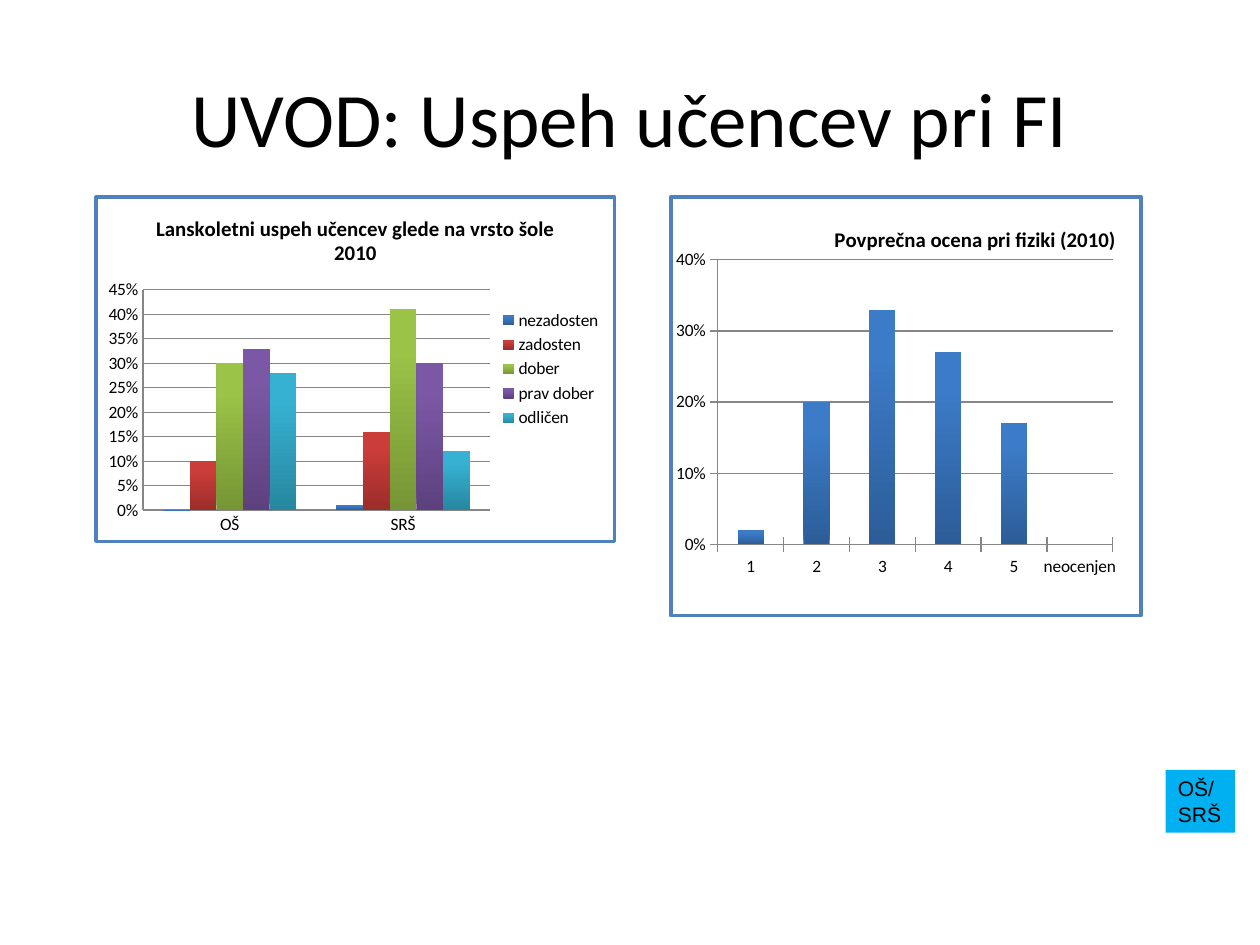
from dataclasses import dataclass
from typing import Optional

from lxml.etree import SubElement
from pptx import Presentation
from pptx.chart.data import CategoryChartData
from pptx.dml.color import RGBColor
from pptx.enum.chart import XL_CHART_TYPE as ChartType
from pptx.enum.chart import XL_LEGEND_POSITION as LegendPosition
from pptx.enum.chart import XL_TICK_MARK as TickMark
from pptx.enum.shapes import MSO_SHAPE as Shape
from pptx.enum.text import MSO_ANCHOR as Anchor
from pptx.enum.text import PP_ALIGN as Align
from pptx.oxml import parse_xml
from pptx.oxml.ns import nsdecls, qn
from pptx.util import Inches, Pt

BLACK, GRID = "000000", "868686"
GRADIENTS = [
    ("2C5D98", "3C7BC7"),
    ("9B2D2A", "CB3D3A"),
    ("769535", "9BC348"),
    ("5D417E", "7B58A6"),
    ("2787A0", "36B1D2"),
]


@dataclass
class Box:
    left: float
    top: float
    width: float
    height: float

    def lengths(self) -> list:
        return [Inches(v) for v in (self.left, self.top, self.width, self.height)]


@dataclass
class GradeChart:
    box: Box
    title: str
    categories: list[str]
    series: dict[str, list[float]]
    number_format: str
    axis_max: float
    axis_step: float
    tick: TickMark
    plot: Box
    legend: bool = False
    title_at: Optional[tuple[float, float]] = None


def color(value: str) -> RGBColor:
    return RGBColor.from_string(value)


def add_run(paragraph, text: str, size: float, face: str, bold: bool = False) -> None:
    run = paragraph.add_run()
    run.text = text
    run.font.size = Pt(size)
    run.font.name = face
    run.font.bold = bold
    run.font.color.rgb = color(BLACK)


def place(parent, index: int, settings: dict) -> None:
    for old in parent.findall(qn("c:layout")):
        parent.remove(old)
    layout = parse_xml(f"<c:layout {nsdecls('c')}/>")
    manual = SubElement(layout, qn("c:manualLayout"))
    for key, value in settings.items():
        SubElement(manual, qn(f"c:{key}")).set("val", str(value))
    parent.insert(index, layout)


def frame_chart(chart_space) -> None:
    frame = parse_xml(
        f'<c:spPr {nsdecls("c", "a")}>'
        '<a:solidFill><a:srgbClr val="FFFFFF"/></a:solidFill>'
        '<a:ln w="25400"><a:solidFill><a:srgbClr val="4F81BD"/></a:solidFill></a:ln>'
        "</c:spPr>"
    )
    chart_space.find(qn("c:chart")).addnext(frame)


def draw_chart(slide, spec: GradeChart) -> None:
    data = CategoryChartData(number_format=spec.number_format)
    data.categories = spec.categories
    for name, values in spec.series.items():
        data.add_series(name, values)
    chart = slide.shapes.add_chart(
        ChartType.COLUMN_CLUSTERED, *spec.box.lengths(), data
    ).chart
    chart.font.size = Pt(10)
    chart.font.name = "Calibri"
    chart.font.color.rgb = color(BLACK)
    frame_chart(chart.element)

    chart.has_title = True
    heading = chart.chart_title
    add_run(heading.text_frame.paragraphs[0], spec.title, 12, "Calibri", True)
    if spec.title_at:
        x, y = spec.title_at
        place(heading._element, 1, {"xMode": "edge", "yMode": "edge", "x": x, "y": y})
    plot = spec.plot
    place(
        chart.element.find(f".//{qn('c:plotArea')}"),
        0,
        {
            "layoutTarget": "inner", "xMode": "edge", "yMode": "edge",
            "x": plot.left, "y": plot.top, "w": plot.width, "h": plot.height,
        },
    )

    chart.has_legend = spec.legend
    if spec.legend:
        chart.legend.position = LegendPosition.RIGHT
        chart.legend.include_in_layout = False

    grades, shares = chart.category_axis, chart.value_axis
    for axis in (grades, shares):
        axis.major_tick_mark = spec.tick
        axis.minor_tick_mark = TickMark.NONE
        axis.format.line.color.rgb = color(GRID)
    shares.minimum_scale = 0
    shares.maximum_scale = spec.axis_max
    shares.major_unit = spec.axis_step
    shares.major_gridlines.format.line.color.rgb = color(GRID)
    shares.tick_labels.number_format = spec.number_format
    shares.tick_labels.number_format_is_linked = False

    bars = chart.plots[0]
    bars.vary_by_categories = False
    bars.gap_width = 150
    bars.overlap = 0
    for series, (dark, light) in zip(bars.series, GRADIENTS):
        fill = series.format.fill
        fill.gradient()
        fill.gradient_angle = 90
        for stop, shade, position in zip(fill.gradient_stops, (dark, light), (0, 0.8)):
            stop.color.rgb = color(shade)
            stop.position = position


def draw_title(slide, text: str, box: Box) -> None:
    frame = slide.shapes.add_textbox(*box.lengths()).text_frame
    frame.word_wrap = True
    frame.vertical_anchor = Anchor.MIDDLE
    frame.paragraphs[0].alignment = Align.CENTER
    add_run(frame.paragraphs[0], text, 44, "Calibri")


def draw_school_tag(slide, text: str, box: Box) -> None:
    tag = slide.shapes.add_shape(Shape.RECTANGLE, *box.lengths())
    tag.shadow.inherit = False
    tag.fill.solid()
    tag.fill.fore_color.rgb = color("00B0F0")
    tag.line.fill.background()
    tag.text_frame.word_wrap = True
    tag.text_frame.vertical_anchor = Anchor.TOP
    tag.text_frame.paragraphs[0].alignment = Align.LEFT
    add_run(tag.text_frame.paragraphs[0], text, 12, "Arial")


def main() -> None:
    deck = Presentation()
    deck.slide_width, deck.slide_height = Inches(10), Inches(7.5)
    slide = deck.slides.add_slide(deck.slide_layouts[6])

    by_school = GradeChart(
        box=Box(0.75, 1.55, 4.14, 2.76),
        title="Lanskoletni uspeh učencev glede na vrsto šole 2010",
        categories=["OŠ", "SRŠ"],
        series={
            "nezadosten": [0, 0.01],
            "zadosten": [0.1, 0.16],
            "dober": [0.3, 0.41],
            "prav dober": [0.33, 0.3],
            "odličen": [0.28, 0.12],
        },
        number_format="0%", axis_max=0.45, axis_step=0.05, tick=TickMark.NONE,
        plot=Box(0.09, 0.27, 0.67, 0.64), legend=True,
    )
    average_grade = GradeChart(
        box=Box(5.31, 1.55, 3.76, 3.35),
        title="Povprečna ocena pri fiziki (2010)",
        categories=["1", "2", "3", "4", "5", "neocenjen"],
        series={"Series 1": [2, 20, 33, 27, 17, 0]},
        number_format="General\\%", axis_max=40, axis_step=10, tick=TickMark.CROSS,
        plot=Box(0.1, 0.15, 0.84, 0.68), title_at=(0.34, 0.06),
    )

    draw_title(slide, "UVOD: Uspeh učencev pri FI", Box(0.5, 0.3, 9, 1.25))
    for chart in (by_school, average_grade):
        draw_chart(slide, chart)
    draw_school_tag(slide, "OŠ/SRŠ", Box(9.25, 6.11, 0.55, 0.5))
    deck.save("out.pptx")


if __name__ == "__main__":
    main()
